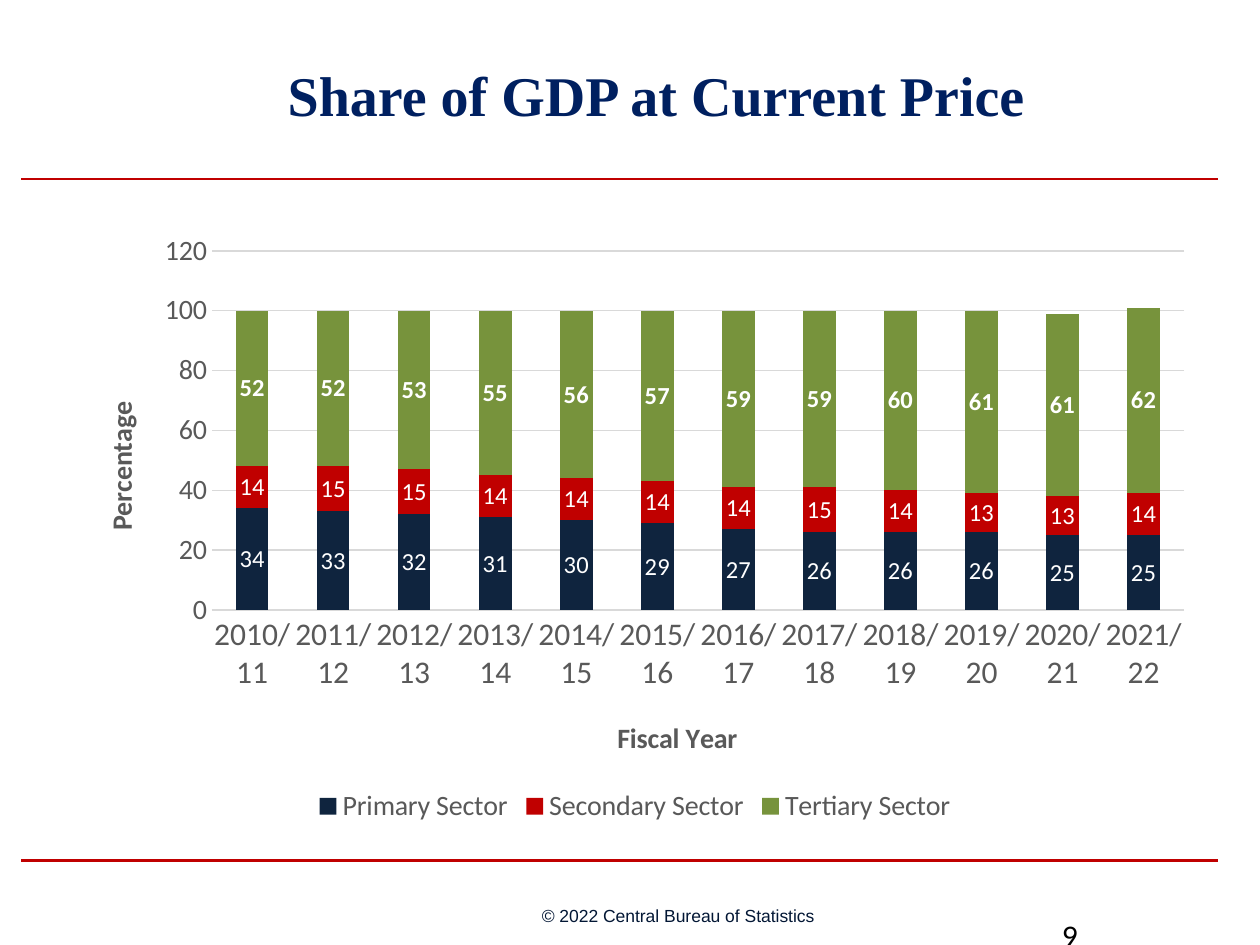
from pptx import Presentation
from pptx.chart.data import CategoryChartData
from pptx.dml.color import RGBColor
from pptx.enum.chart import (XL_CHART_TYPE, XL_LABEL_POSITION,
                             XL_LEGEND_POSITION, XL_TICK_MARK)
from pptx.enum.shapes import MSO_CONNECTOR
from pptx.enum.text import MSO_ANCHOR, PP_ALIGN
from pptx.oxml import parse_xml
from pptx.oxml.ns import nsdecls, qn
from pptx.util import Inches, Pt


def style(font, size, color, name="Calibri", bold=False):
    font.size, font.name, font.bold = Pt(size), name, bold
    font.color.rgb = RGBColor.from_string(color)


def place(node, **sides):
    """Give a chart part a manual layout, in fractions of the chart."""
    old = node.find(qn("c:layout"))
    spot = 0 if old is None else node.index(old)
    if old is not None:
        node.remove(old)
    target = '<c:layoutTarget val="inner"/>' if "w" in sides else ""
    modes = "".join(f'<c:{s}Mode val="edge"/>' for s in "xy")
    vals = "".join(f'<c:{s} val="{v}"/>' for s, v in sides.items())
    node.insert(spot, parse_xml(
        f'<c:layout {nsdecls("c")}><c:manualLayout>{target}{modes}{vals}'
        "</c:manualLayout></c:layout>"))


prs = Presentation()
prs.slide_width, prs.slide_height = Inches(10), Inches(7.5)
slide = prs.slides.add_slide(prs.slide_layouts[5])

# Rules above and below the chart
for y in (1.42, 6.83):
    rule = slide.shapes.add_connector(
        MSO_CONNECTOR.STRAIGHT, Inches(0.17), Inches(y), Inches(9.67), Inches(y))
    rule.line.width = Pt(1.5)
    rule.line.color.rgb = RGBColor.from_string("C00000")
    rule.element.spPr.append(parse_xml(f'<a:effectLst {nsdecls("a")}/>'))

# Title
title = slide.shapes.title
title.left, title.top = Inches(0.96), Inches(0.23)
title.width, title.height = Inches(8.5), Inches(1.03)
frame = title.text_frame
frame.vertical_anchor = MSO_ANCHOR.MIDDLE
para = frame.paragraphs[0]
para.alignment = PP_ALIGN.CENTER
run = para.add_run()
run.text = "Share of GDP at Current Price"
style(run.font, 32, "002060", "Times New Roman", True)

# Chart
sectors = [
    ("Primary Sector", "0F243E", False,
     (34, 33, 32, 31, 30, 29, 27, 26, 26, 26, 25, 25)),
    ("Secondary Sector", "C00000", False,
     (14, 15, 15, 14, 14, 14, 14, 15, 14, 13, 13, 14)),
    ("Tertiary Sector", "77933C", True,
     (52, 52, 53, 55, 56, 57, 59, 59, 60, 61, 61, 62)),
]
data = CategoryChartData(number_format="0")
data.categories = [f"{year}/{year % 100 + 1}" for year in range(2010, 2022)]
for name, color, bold, vals in sectors:
    data.add_series(name, vals)
chart = slide.shapes.add_chart(
    XL_CHART_TYPE.COLUMN_STACKED, Inches(0.5), Inches(1.75),
    Inches(9.08), Inches(4.83), data).chart
style(chart.font, 10, "000000")
chart.has_title = False
chart.has_legend = True
chart.legend.position = XL_LEGEND_POSITION.BOTTOM
chart.legend.include_in_layout = False
style(chart.legend.font, 16, "595959")

plot = chart.plots[0]
plot.gap_width, plot.overlap = 150, 100
plot.vary_by_categories = False
for bars, (name, color, bold, vals) in zip(plot.series, sectors):
    bars.format.fill.solid()
    bars.format.fill.fore_color.rgb = RGBColor.from_string(color)
    labels = bars.data_labels
    labels.show_value = True
    labels.position = XL_LABEL_POSITION.CENTER
    labels.number_format, labels.number_format_is_linked = "0", False
    style(labels.font, 14, "FFFFFF", bold=bold)

years, shares = chart.category_axis, chart.value_axis
for axis, text, size, x, y in ((years, "Fiscal Year", 18, 0.48, 0.81),
                               (shares, "Percentage", 16, 0.03, 0.29)):
    axis.major_tick_mark = axis.minor_tick_mark = XL_TICK_MARK.NONE
    style(axis.tick_labels.font, size, "595959")
    run = axis.axis_title.text_frame.paragraphs[0].add_run()
    run.text = text
    style(run.font, 16, "595959", bold=True)
    place(axis.axis_title.element, x=x, y=y)
shares.minimum_scale, shares.maximum_scale, shares.major_unit = 0, 120, 20
shares.tick_labels.number_format = "0"
shares.tick_labels.number_format_is_linked = False
shares.format.line.fill.background()
shares.has_major_gridlines = True
for line in (years.format.line, shares.major_gridlines.format.line):
    line.width = Pt(0.75)
    line.color.rgb = RGBColor.from_string("D9D9D9")
area = chart.element.find(qn("c:chart")).find(qn("c:plotArea"))
place(area, x=0.13, y=0.05, w=0.85, h=0.59)

# Footer and page number
foot = slide.shapes.add_textbox(Inches(4.3), Inches(7.17), Inches(2.2), Inches(0.19))
frame = foot.text_frame
frame.margin_left = frame.margin_right = frame.margin_top = frame.margin_bottom = 0
frame.vertical_anchor = MSO_ANCHOR.MIDDLE
frame.word_wrap = True
run = frame.paragraphs[0].add_run()
run.text = "© 2022 Central Bureau of Statistics"
style(run.font, 10, "031735", "Arial")

page = slide.shapes.add_textbox(Inches(8.33), Inches(7.22), Inches(1.33), Inches(0.23))
page.text_frame.word_wrap = True
run = page.text_frame.paragraphs[0].add_run()
run.text = "9"
style(run.font, 18, "000000")

prs.save("out.pptx")
